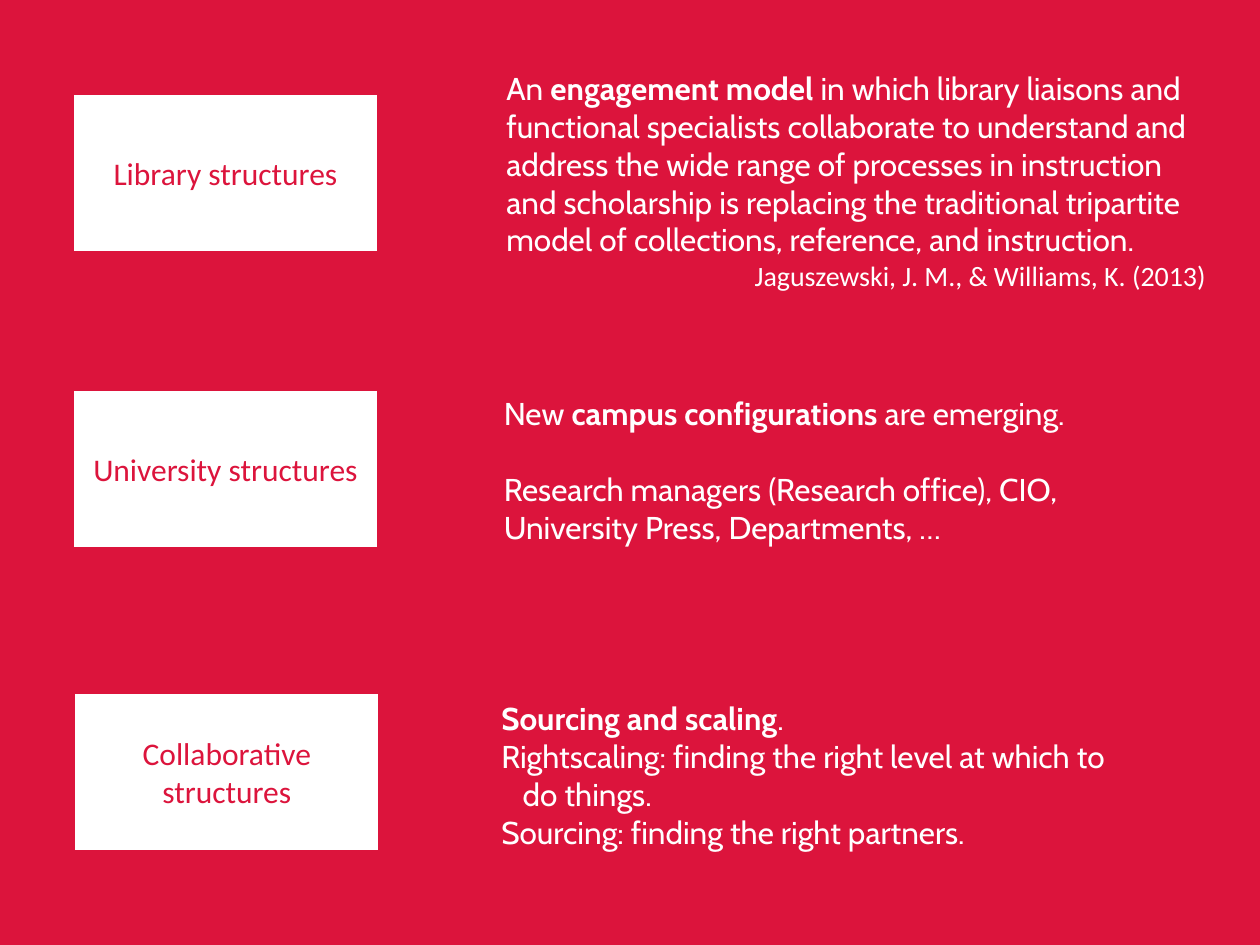
"""Build a slide that pairs three kinds of structure with notes on each."""
from pptx import Presentation, util as u
from pptx.dml.color import RGBColor
from pptx.enum import shapes, text

HUES = {"red": "DC143C", "white": "FFFFFF"}
WIDE, HIGH = 10, 7.5
CARD = (2.42, 1.25)
LEFT, RIGHT = text.PP_ALIGN.LEFT, text.PP_ALIGN.RIGHT
PLAIN = {"font": "Cabin", "size": 18, "align": LEFT, "gap": 0, "hang": 0}

ROWS = [
    {"label": "Library structures", "card": (0.58, 0.75), "note": (3.92, 0.5, 5.75, 2.19),
     "paras": [
         ([("An ", False), ("engagement model ", True),
           ("in which library liaisons and functional specialists collaborate to "
            "understand and address the wide range of processes in instruction and "
            "scholarship is replacing the traditional tripartite model of collections, "
            "reference, and instruction.", False)], {}),
         ([("Jaguszewski, J. M., & Williams, K. (2013)", False)],
          {"font": "Calibri", "size": 16, "align": RIGHT})]},
    {"label": "University structures", "card": (0.58, 3.1), "note": (3.9, 3.08, 5.43, 1.31),
     "paras": [
         ([("New ", False), ("campus configurations ", True), ("are emerging.", False)], {}),
         ([("Research managers (Research office), CIO, University Press, "
            "Departments, …", False)], {"gap": 21.6})]},
    {"label": "Collaborative structures", "card": (0.59, 5.5), "note": (3.88, 5.5, 5.42, 1.31),
     "paras": [
         ([("Sourcing and scaling", True), (".", False)], {}),
         ([("Rightscaling: finding the right level at which to ", False),
           ("\v", False), ("do things.", False)], {"hang": 0.17}),
         ([("Sourcing: finding the right partners.", False)], {})]},
]


def hue(name):
    return RGBColor.from_string(HUES[name])


def style(run, font, size, tint, bold=False):
    run.font.name, run.font.size, run.font.bold = font, u.Pt(size), bold
    run.font.color.rgb = hue(tint)


def add_card(slide, label, spot):
    box = slide.shapes.add_shape(shapes.MSO_SHAPE.RECTANGLE, *map(u.Inches, spot + CARD))
    box.shadow.inherit = False
    box.fill.solid()
    box.fill.fore_color.rgb = hue("white")
    box.line.color.rgb = hue("red")
    box.line.width = u.Pt(1)
    frame = box.text_frame
    frame.text = label
    frame.word_wrap = True
    frame.vertical_anchor = text.MSO_ANCHOR.MIDDLE
    para = frame.paragraphs[0]
    para.alignment = text.PP_ALIGN.CENTER
    style(para.runs[0], "Calibri", 18, "red")


def add_note(slide, paras, place):
    frame = slide.shapes.add_textbox(*map(u.Inches, place)).text_frame
    frame.word_wrap = True
    frame.auto_size = text.MSO_AUTO_SIZE.SHAPE_TO_FIT_TEXT
    for num, (parts, extra) in enumerate(paras):
        look = {**PLAIN, **extra}
        para = frame.add_paragraph() if num else frame.paragraphs[0]
        para.alignment = look["align"]
        para.space_before = u.Pt(look["gap"])
        if look["hang"]:
            props = para._p.get_or_add_pPr()
            props.set("marL", str(u.Inches(look["hang"])))
            props.set("indent", str(-u.Inches(look["hang"])))
        for words, bold in parts:
            if words == "\v":
                para.add_line_break()
                continue
            run = para.add_run()
            run.text = words
            style(run, look["font"], look["size"], "white", bold)


def main():
    deck = Presentation()
    deck.slide_width, deck.slide_height = u.Inches(WIDE), u.Inches(HIGH)
    slide = deck.slides.add_slide(deck.slide_layouts[6])
    slide.background.fill.solid()
    slide.background.fill.fore_color.rgb = hue("red")
    for row in ROWS:
        add_card(slide, row["label"], row["card"])
        add_note(slide, row["paras"], row["note"])
    deck.save("out.pptx")


if __name__ == "__main__":
    main()
